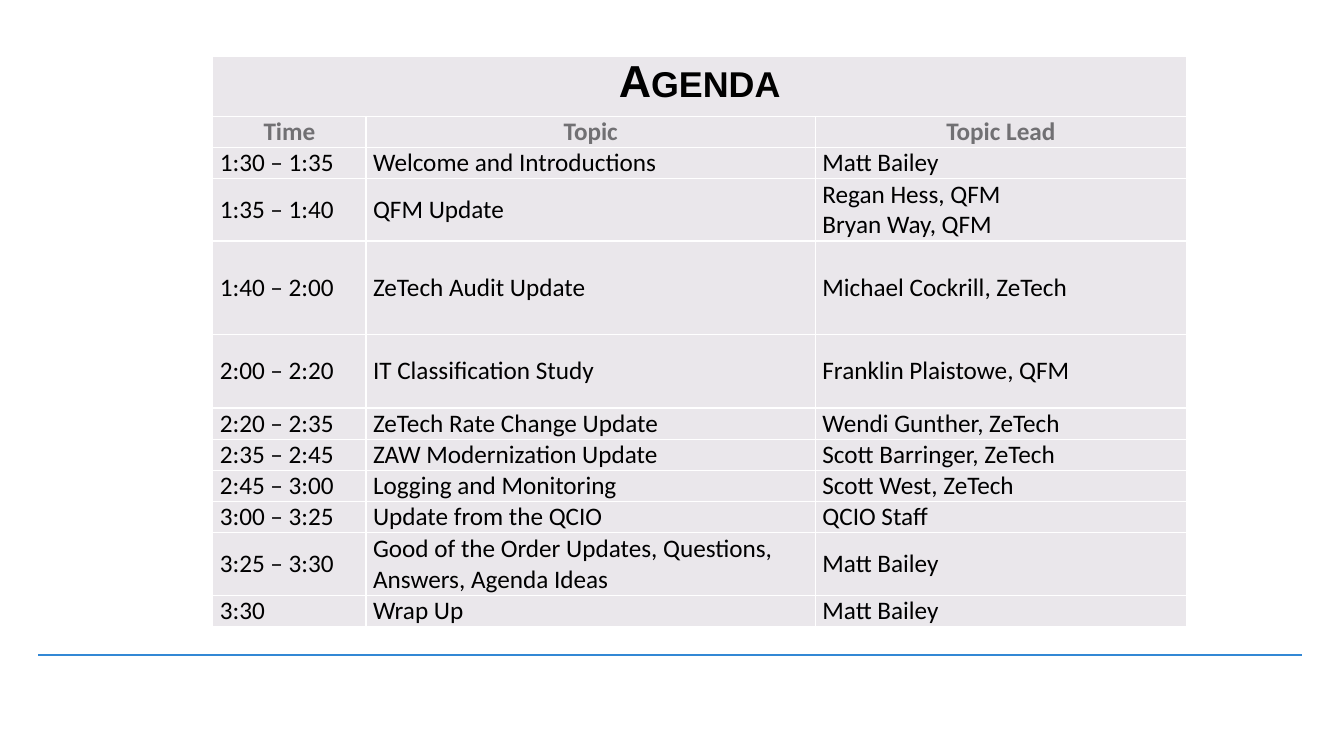
from lxml.etree import SubElement
from pptx import Presentation
from pptx.dml.color import RGBColor as Color
from pptx.enum.shapes import MSO_CONNECTOR as Connector
from pptx.enum.text import MSO_ANCHOR as Anchor, PP_ALIGN as Align
from pptx.oxml.ns import qn
from pptx.util import Pt

COLORS = {
    "rule": "3388D5",
    "cell": "EAE7EB",
    "border": "FFFFFF",
    "header": "717073",
    "text": "000000",
}
LINE_HEIGHT = 22.3
TITLE_HEIGHT = 42.5
COLUMN_WIDTHS = [109.5, 321, 265]
HEADERS = ["Time", "Topic", "Topic Lead"]
AGENDA = [
    ("1:30 – 1:35", "Welcome and Introductions", "Matt Bailey", 1),
    ("1:35 – 1:40", "QFM Update", "Regan Hess, QFM\nBryan Way, QFM", 2),
    ("1:40 – 2:00", "ZeTech Audit Update", "Michael Cockrill, ZeTech", 3),
    ("2:00 – 2:20", "IT Classification Study", "Franklin Plaistowe, QFM", 2.35),
    ("2:20 – 2:35", "ZeTech Rate Change Update", "Wendi Gunther, ZeTech", 1),
    ("2:35 – 2:45", "ZAW Modernization Update", "Scott Barringer, ZeTech", 1),
    ("2:45 – 3:00", "Logging and Monitoring", "Scott West, ZeTech", 1),
    ("3:00 – 3:25", "Update from the QCIO", "QCIO Staff", 1),
    ("3:25 – 3:30", "Good of the Order Updates, Questions, Answers, Agenda Ideas",
     "Matt Bailey", 2),
    ("3:30", "Wrap Up", "Matt Bailey", 1),
]


def color(name):
    return Color.from_string(COLORS[name])


def add_rule(page, left, right, top):
    rule = page.shapes.add_connector(
        Connector.STRAIGHT, Pt(left), Pt(top), Pt(right), Pt(top))
    rule.line.color.rgb = color("rule")
    rule.line.width = Pt(1.5)
    SubElement(rule._element.spPr, qn("a:effectLst"))


def style_cell(cell):
    properties = cell._tc.get_or_add_tcPr()
    for side in ("a:lnL", "a:lnR", "a:lnT", "a:lnB"):
        border = SubElement(properties, qn(side), w=str(Pt(1)))
        fill = SubElement(border, qn("a:solidFill"))
        SubElement(fill, qn("a:srgbClr"), val=COLORS["border"])
    cell.fill.solid()
    cell.fill.fore_color.rgb = color("cell")
    cell.margin_left = cell.margin_right = Pt(5)
    cell.margin_top = cell.margin_bottom = 0


def write_cell(cell, text, ink="text", font="Calibri", size=18, heading=False):
    cell.text = text
    cell.vertical_anchor = Anchor.TOP if heading else Anchor.MIDDLE
    for para in cell.text_frame.paragraphs:
        para.alignment = Align.CENTER if heading else Align.LEFT
        para.font.name = font
        para.font.size = Pt(size)
        para.font.bold = heading
        para.font.color.rgb = color(ink)


def add_agenda(page, left, top):
    heights = [TITLE_HEIGHT, LINE_HEIGHT] + [LINE_HEIGHT * row[-1] for row in AGENDA]
    table = page.shapes.add_table(
        len(heights), len(COLUMN_WIDTHS), Pt(left), Pt(top),
        Pt(sum(COLUMN_WIDTHS)), Pt(sum(heights))).table
    table.first_row = table.horz_banding = False
    for column, width in zip(table.columns, COLUMN_WIDTHS):
        column.width = Pt(width)
    for row, height in zip(table.rows, heights):
        row.height = Pt(height)
    for cell in table.iter_cells():
        style_cell(cell)

    title = table.cell(0, 0)
    title.merge(table.cell(0, len(COLUMN_WIDTHS) - 1))
    write_cell(title, "Agenda", font="Arial", size=32, heading=True)
    title_span = title.text_frame.paragraphs[0].runs[0]
    title_span.font._element.set("cap", "small")

    for column, header in enumerate(HEADERS):
        write_cell(table.cell(1, column), header, ink="header", heading=True)
    for row, (*entries, _) in enumerate(AGENDA, start=2):
        for column, entry in enumerate(entries):
            write_cell(table.cell(row, column), entry)


def main():
    deck = Presentation()
    deck.slide_width, deck.slide_height = Pt(960), Pt(540)
    page = deck.slides.add_slide(deck.slide_layouts[6])
    add_rule(page, 27.4, 930.2, 468)
    add_agenda(page, 152, 40.5)
    deck.save("out.pptx")


if __name__ == "__main__":
    main()
